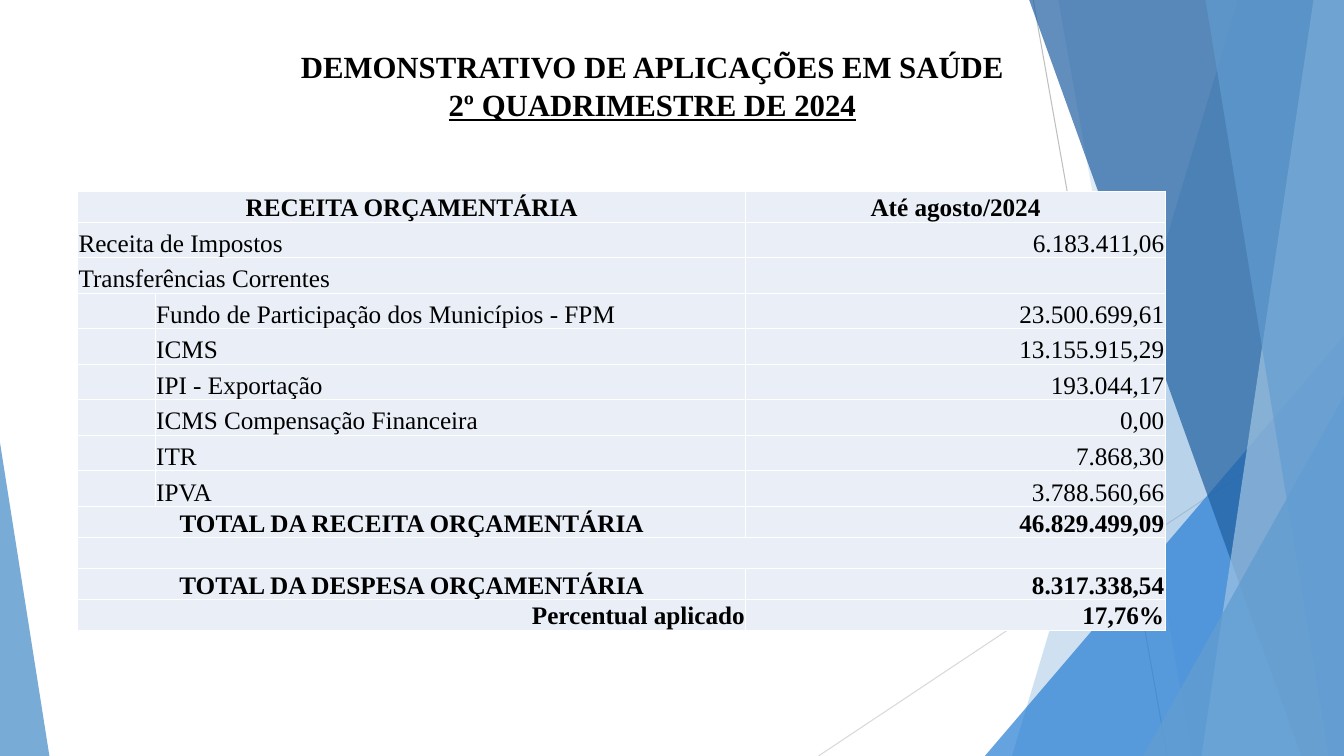
from dataclasses import dataclass

from lxml import etree
from pptx import Presentation
from pptx import util as u
from pptx.dml.color import RGBColor
from pptx.enum import shapes, text
from pptx.oxml.ns import qn

SLIDE_WIDTH, SLIDE_HEIGHT = u.Inches(13.333), u.Inches(7.5)
FONT = "Times New Roman"
ALIGN = text.PP_ALIGN
CELL_FILL = "EAEFF7"


@dataclass
class Band:
    """Facet running the full height to the right edge; lengths in % of the slide."""
    top_x: float
    bottom_x: float
    color: str
    opacity: int


@dataclass
class Corner:
    """Right triangle resting on the bottom edge; lengths in % of the slide."""
    left: float
    top: float
    width: float
    apex: int
    color: str
    opacity: int


@dataclass
class Ray:
    start: tuple[float, float]
    end: tuple[float, float]
    color: str


@dataclass
class Entry:
    label: str = ""
    amount: str = ""
    label_align: ALIGN = ALIGN.LEFT
    amount_align: ALIGN = ALIGN.RIGHT
    bold: bool = False
    label_column: int = 0
    label_span: int = 2
    height: float = 4.7


def subentry(label: str, amount: str) -> Entry:
    return Entry(label, amount, label_column=1, label_span=1)


def total(label: str, amount: str, **options) -> Entry:
    return Entry(label, amount, bold=True, height=4.1,
                 **{"label_align": ALIGN.CENTER, **options})


RAYS = [
    Ray((76.88, 0), (86.85, 100), "BFBFBF"),
    Ray((100, 53.73), (60.9, 100), "D9D9D9"),
]
FACETS = [
    Band(92.1, 75.3, "629DD1", 30),
    Band(78.75, 88.73, "629DD1", 20),
    Corner(73.28, 44.4, 26.72, 1, "297FD5", 72),
    Band(76.58, 96.83, "1F5FA0", 70),
    Band(97.73, 89.4, "A1C4E3", 70),
    Band(89.7, 98.85, "629DD1", 65),
    Corner(85.05, 52.4, 14.95, 1, "629DD1", 80),
    Corner(0, 58.53, 3.68, 0, "629DD1", 85),
]
COLUMN_WIDTHS = [5.78, 43.95, 31.2]
ENTRIES = [
    total("RECEITA ORÇAMENTÁRIA", "Até agosto/2024", amount_align=ALIGN.CENTER),
    Entry("Receita de Impostos", "6.183.411,06"),
    Entry("Transferências Correntes"),
    subentry("Fundo de Participação dos Municípios - FPM", "23.500.699,61"),
    subentry("ICMS", "13.155.915,29"),
    subentry("IPI - Exportação", "193.044,17"),
    subentry("ICMS Compensação Financeira", "0,00"),
    subentry("ITR", "7.868,30"),
    subentry("IPVA", "3.788.560,66"),
    total("TOTAL DA RECEITA ORÇAMENTÁRIA", "46.829.499,09"),
    Entry(label_span=3, height=4.1),
    total("TOTAL DA DESPESA ORÇAMENTÁRIA", "8.317.338,54"),
    total("Percentual aplicado", "17,76%", label_align=ALIGN.RIGHT),
]


def across(percent: float) -> int:
    return round(SLIDE_WIDTH * percent / 100)


def down(percent: float) -> int:
    return round(SLIDE_HEIGHT * percent / 100)


def rgb(color: str) -> RGBColor:
    return RGBColor.from_string(color)


def write(paragraph, wording: str, *, size: float = 18, bold: bool = False,
          underline: bool = False, align: ALIGN = ALIGN.LEFT) -> None:
    paragraph.alignment = align
    run = paragraph.add_run()
    run.text = wording
    run.font.name, run.font.size = FONT, u.Pt(size)
    run.font.bold, run.font.underline = bold, underline
    run.font.color.rgb = rgb("000000")


def draw_ray(slide, ray: Ray) -> None:
    connector = slide.shapes.add_connector(
        shapes.MSO_CONNECTOR.STRAIGHT, across(ray.start[0]), down(ray.start[1]),
        across(ray.end[0]), down(ray.end[1]))
    connector.line.color.rgb = rgb(ray.color)
    connector.line.width = u.Pt(0.75)
    etree.SubElement(connector._element.spPr, qn("a:effectLst"))


def draw_facet(slide, facet: Band | Corner) -> None:
    if isinstance(facet, Band):
        outline = slide.shapes.build_freeform(across(facet.top_x), 0)
        outline.add_line_segments([(SLIDE_WIDTH, 0), (SLIDE_WIDTH, SLIDE_HEIGHT),
                                   (across(facet.bottom_x), SLIDE_HEIGHT)])
        shape = outline.convert_to_shape()
    else:
        shape = slide.shapes.add_shape(
            shapes.MSO_SHAPE.ISOSCELES_TRIANGLE, across(facet.left), down(facet.top),
            across(facet.width), down(100 - facet.top))
        shape.adjustments[0] = facet.apex
    shape.shadow.inherit = False
    shape.line.fill.background()
    shape.fill.solid()
    shape.fill.fore_color.rgb = rgb(facet.color)
    tint = shape._element.spPr.find(qn("a:solidFill"))[0]
    etree.SubElement(tint, qn("a:alpha"), val=str(facet.opacity * 1000))


def write_title(slide) -> None:
    title = slide.shapes.title
    title.left, title.top = across(13.28), down(5.07)
    title.width, title.height = across(70.5), down(19.2)
    frame = title.text_frame
    frame.word_wrap = True
    frame.auto_size = text.MSO_AUTO_SIZE.NONE
    frame.vertical_anchor = text.MSO_ANCHOR.TOP
    frame.margin_top = u.Inches(0.07)
    heading = frame.paragraphs[0]
    heading.line_spacing = 1.05
    write(heading, "DEMONSTRATIVO DE APLICAÇÕES EM SAÚDE", size=22, bold=True,
          align=ALIGN.CENTER)
    heading.add_line_break()
    write(heading, "2º QUADRIMESTRE DE 2024", size=22, bold=True, underline=True,
          align=ALIGN.CENTER)


def style_cell(cell) -> None:
    cell.margin_left = cell.margin_right = cell.margin_top = u.Inches(0.01)
    cell.margin_bottom = 0
    cell.vertical_anchor = text.MSO_ANCHOR.BOTTOM
    properties = cell._tc.get_or_add_tcPr()
    for side in ("lnL", "lnR", "lnT", "lnB"):
        border = etree.SubElement(properties, qn(f"a:{side}"), w=str(u.Pt(1)))
        stroke = etree.SubElement(border, qn("a:solidFill"))
        etree.SubElement(stroke, qn("a:srgbClr"), val="FFFFFF")
    cell.fill.solid()
    cell.fill.fore_color.rgb = rgb(CELL_FILL)


def draw_budget(slide) -> None:
    budget = slide.shapes.add_table(
        len(ENTRIES), len(COLUMN_WIDTHS), across(5.77), down(25.3),
        across(sum(COLUMN_WIDTHS)), down(sum(e.height for e in ENTRIES))).table
    budget.first_row = budget.horz_banding = False
    for column, width in zip(budget.columns, COLUMN_WIDTHS):
        column.width = across(width)
    for row, entry in enumerate(ENTRIES):
        budget.rows[row].height = down(entry.height)
        wordings = {2: (entry.amount, entry.amount_align),
                    entry.label_column: (entry.label, entry.label_align)}
        for column in range(len(COLUMN_WIDTHS)):
            cell = budget.cell(row, column)
            style_cell(cell)
            wording, align = wordings.get(column, ("", ALIGN.LEFT))
            write(cell.text_frame.paragraphs[0], wording, bold=entry.bold, align=align)
        if entry.label_span > 1:
            budget.cell(row, 0).merge(budget.cell(row, entry.label_span - 1))


def main() -> None:
    deck = Presentation()
    deck.slide_width, deck.slide_height = SLIDE_WIDTH, SLIDE_HEIGHT
    slide = deck.slides.add_slide(deck.slide_layouts[5])
    for ray in RAYS:
        draw_ray(slide, ray)
    for facet in FACETS:
        draw_facet(slide, facet)
    write_title(slide)
    draw_budget(slide)
    deck.save("out.pptx")


if __name__ == "__main__":
    main()
